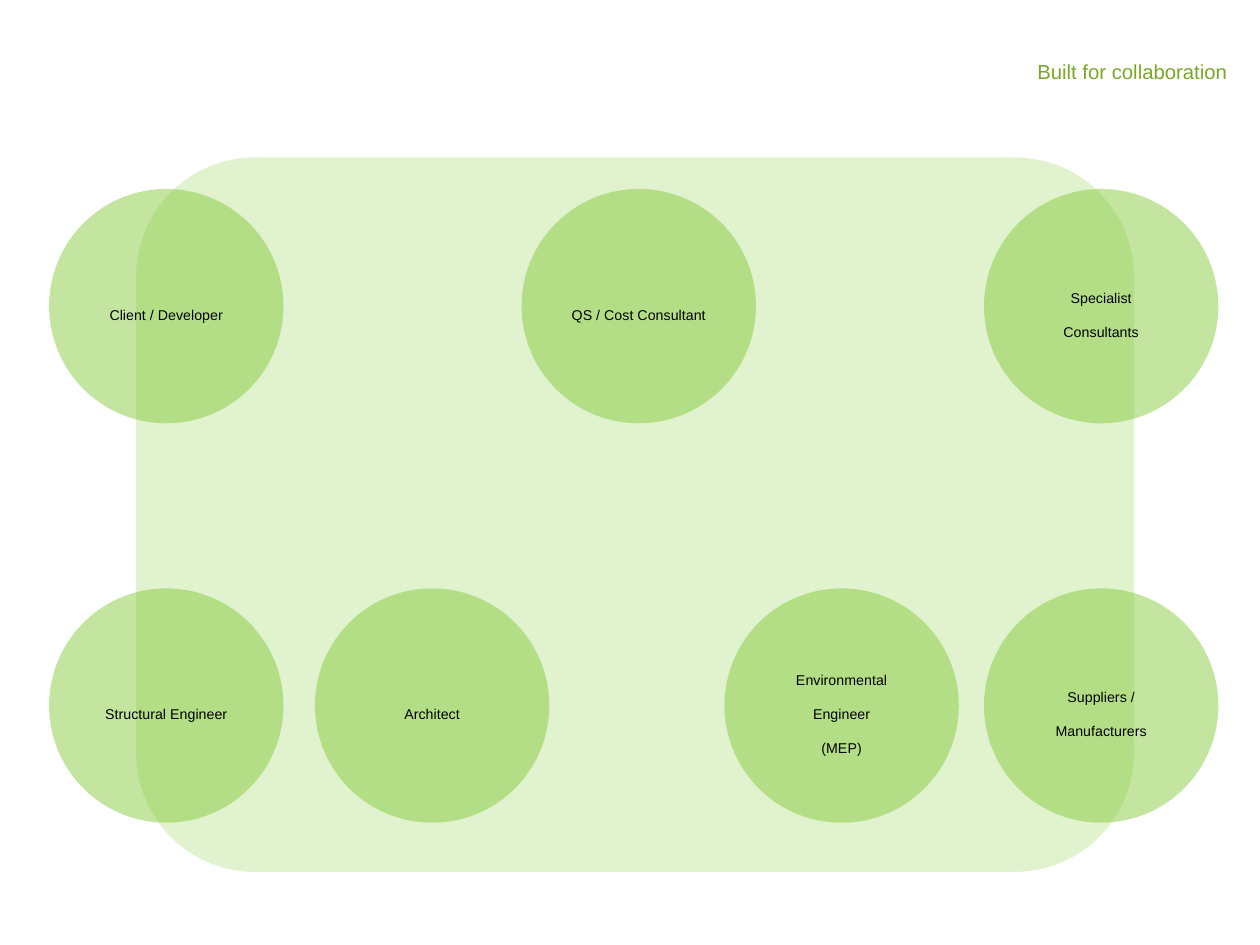
"""Build the "Built for collaboration" slide with its seven project roles."""
from lxml.etree import SubElement
from pptx import Presentation
from pptx.dml.color import RGBColor
from pptx.enum.shapes import MSO_SHAPE as SHAPE
from pptx.enum.text import MSO_ANCHOR as ANCHOR, PP_ALIGN as ALIGN
from pptx.oxml.ns import qn
from pptx.util import Inches, Pt

COLORS = {"panel": "E1F2CE", "circle": "89CC40", "title": "78A72A", "label": "000000"}
DIAMETER = 1.86
TOP_ROW, BOTTOM_ROW = 1.5, 4.67
LEFT_COL, RIGHT_COL = 0.39, 7.81
ROLES = [
    (2.5, BOTTOM_ROW, ["Architect"]),
    (4.14, TOP_ROW, ["QS / Cost Consultant"]),
    (5.75, BOTTOM_ROW, ["Environmental", "Engineer", "(MEP)"]),
    (LEFT_COL, TOP_ROW, ["Client / Developer"]),
    (LEFT_COL, BOTTOM_ROW, ["Structural Engineer"]),
    (RIGHT_COL, BOTTOM_ROW, ["Suppliers /", "Manufacturers"]),
    (RIGHT_COL, TOP_ROW, ["Specialist", "Consultants"]),
]


def write(sp, lines, size, color, align, anchor, top, gap=0):
    tf = sp.text_frame
    tf.word_wrap = True
    tf.vertical_anchor = anchor
    tf.margin_top = Inches(top)
    for i, line in enumerate(lines):
        p = tf.add_paragraph() if i else tf.paragraphs[0]
        p.alignment = align
        if i:
            p.space_before = Pt(gap)
        r = p.add_run()
        r.text = line
        r.font.name = "Arial"
        r.font.size = Pt(size)
        r.font.color.rgb = RGBColor.from_string(COLORS[color])


def add_filled(kind, left, top, width, height, color):
    sp = s.shapes.add_shape(kind, Inches(left), Inches(top), Inches(width), Inches(height))
    sp.shadow.inherit = False
    sp.fill.solid()
    sp.fill.fore_color.rgb = RGBColor.from_string(COLORS[color])
    sp.line.fill.background()
    return sp


prs = Presentation()
prs.slide_width, prs.slide_height = Inches(10), Inches(7.5)
s = prs.slides.add_slide(prs.slide_layouts[6])

add_filled(SHAPE.ROUNDED_RECTANGLE, 1.08, 1.25, 7.92, 5.67, "panel")

title = s.shapes.add_textbox(Inches(4.42), Inches(0.23), Inches(5.42), Inches(0.52))
write(title, ["Built for collaboration"], size=11.6, color="title",
      align=ALIGN.RIGHT, anchor=ANCHOR.TOP, top=0.24)

for left, top, lines in ROLES:
    circle = add_filled(SHAPE.OVAL, left, top, DIAMETER, DIAMETER, "circle")
    rgb = circle.fill._xPr.find(qn("a:solidFill")).find(qn("a:srgbClr"))
    SubElement(rgb, qn("a:alpha"), val="50000")
    write(circle, lines, size=8.1, color="label", align=ALIGN.CENTER,
          anchor=ANCHOR.MIDDLE, top=0.18, gap=9.7)

prs.save("out.pptx")
